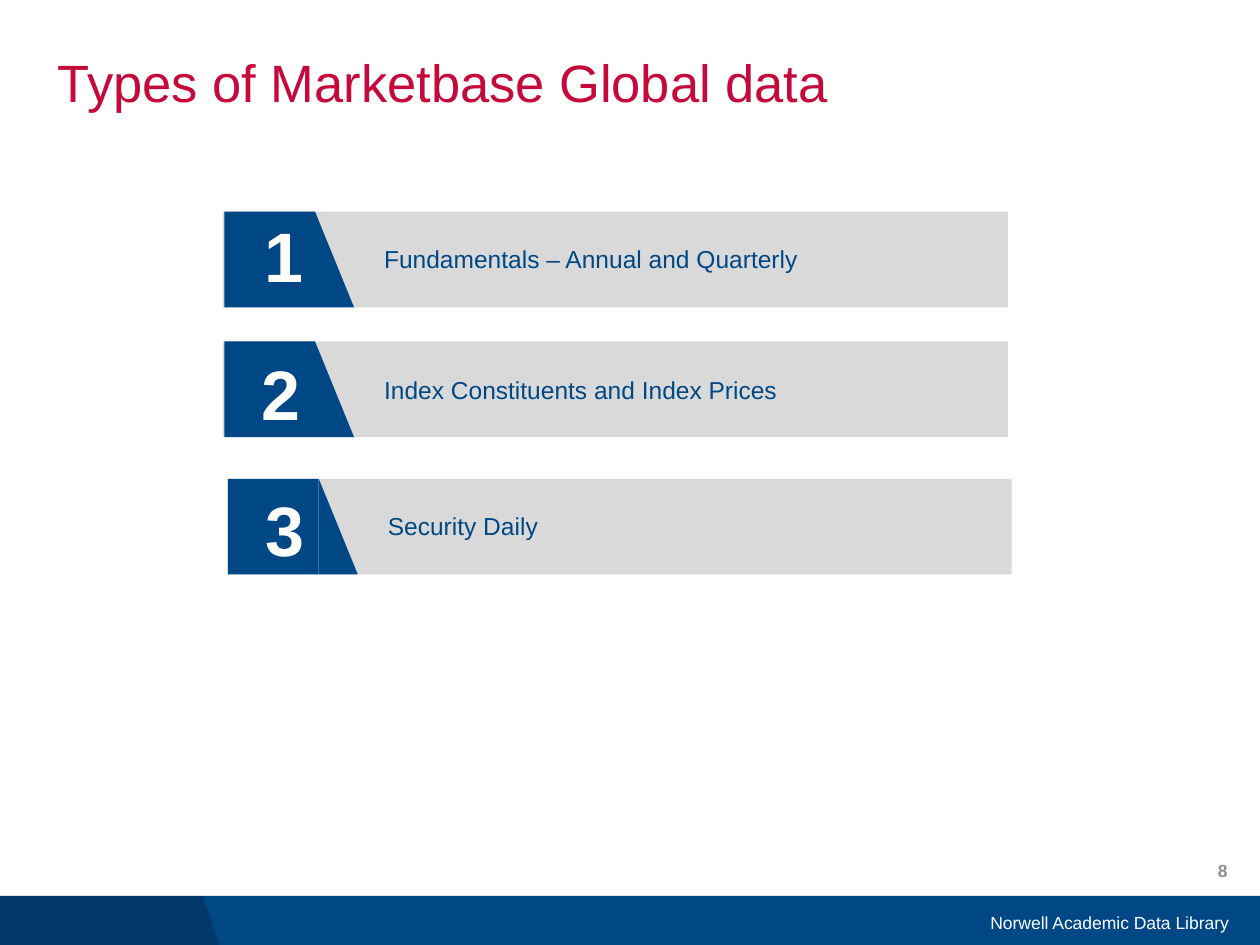
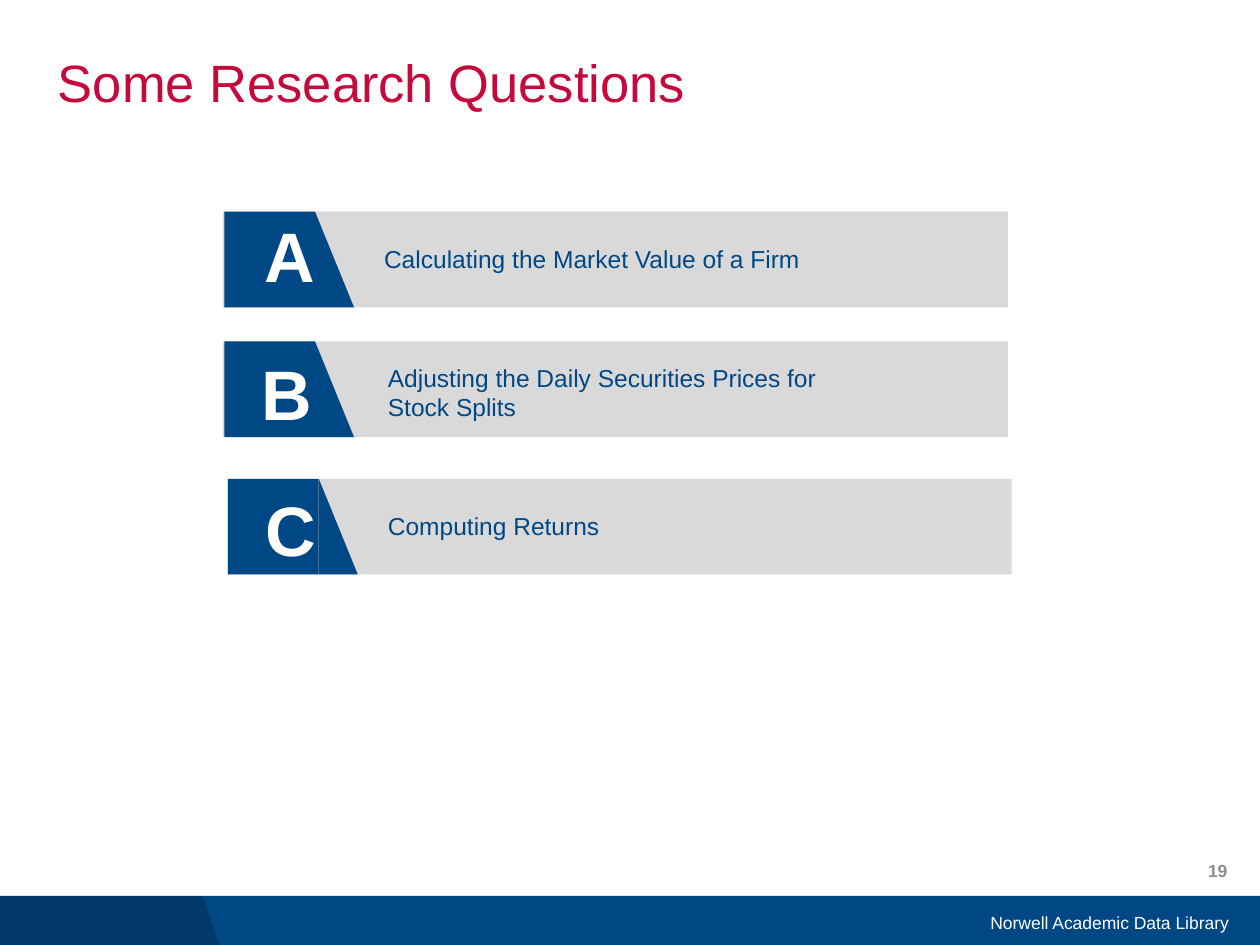
from dataclasses import dataclass

from lxml.etree import SubElement
from pptx import Presentation
from pptx.dml.color import RGBColor
from pptx.enum.shapes import MSO_SHAPE
from pptx.enum.text import MSO_ANCHOR, MSO_AUTO_SIZE, PP_ALIGN
from pptx.oxml.ns import qn
from pptx.util import Emu, Pt

# Shared look: 100 px to the inch
EMU_PER_PX = 9144
FONT = "Arial"
NAVY, CRIMSON, GREY = "004785", "C5093B", "D9D9D9"
WHITE, BLACK, NUMBER_GREY = "FFFFFF", "000000", "8F8F93"
FOOTER_TEXT = "Norwell Academic Data Library"
FOOTER_TOP, FOOTER_HEIGHT = 711, 42
ROW_WIDTH, ROW_HEIGHT = 623, 76
BADGE_INSET, BADGE_WIDTH, SLANT_WIDTH = 1, 72, 31


@dataclass
class RowPlace:
    left: int
    top: int
    mark_dx: int
    mark_dy: int
    mark_width: int


@dataclass
class Entry:
    mark: str
    label: str
    width: int = 389
    dx: int = 118
    dy: int = 21
    height: int = 34


@dataclass
class Page:
    title: str
    number: str
    entries: list[Entry]


ROWS = [
    RowPlace(177, 168, 23, -4, 59),
    RowPlace(177, 271, 21, 2, 53),
    RowPlace(180, 380, 21, 1, 52),
]

PAGES = [
    Page("Types of Marketbase Global data", "8", [
        Entry("1", "Fundamentals – Annual and Quarterly"),
        Entry("2", "Index Constituents and Index Prices", dy=22),
        Entry("3", "Security Daily", width=489),
    ]),
    Page("Some Research Questions", "19", [
        Entry("A", "Calculating the Market Value of a Firm", width=614),
        Entry("B", "Adjusting the Daily Securities Prices for Stock Splits",
              dx=121, dy=12, height=57),
        Entry("C", "Computing Returns", width=489),
    ]),
]


def px(length: int) -> Emu:
    return Emu(length * EMU_PER_PX)


def color(value: str) -> RGBColor:
    return RGBColor.from_string(value)


def paint(shape, fill: str) -> None:
    shape.shadow.inherit = False
    shape.fill.solid()
    shape.fill.fore_color.rgb = color(fill)
    shape.line.fill.background()


def add_block(shapes, kind, left: int, top: int, width: int, height: int, fill: str):
    block = shapes.add_shape(kind, px(left), px(top), px(width), px(height))
    paint(block, fill)
    return block


def write(frame, text: str, *, size: int, ink: str, bold: bool = False,
          align=PP_ALIGN.LEFT, anchor=MSO_ANCHOR.TOP) -> None:
    frame.word_wrap = True
    frame.auto_size = MSO_AUTO_SIZE.NONE
    frame.vertical_anchor = anchor
    paragraph = frame.paragraphs[0]
    paragraph.alignment = align
    run = paragraph.add_run()
    run.text = text
    run.font.name = FONT
    run.font.size = Pt(size)
    run.font.bold = bold
    run.font.color.rgb = color(ink)


def add_text(shapes, left: int, top: int, width: int, height: int, text: str, **style) -> None:
    box = shapes.add_textbox(px(left), px(top), px(width), px(height))
    write(box.text_frame, text, **style)


def add_title(slide, text: str) -> None:
    title = slide.shapes.title
    title.left, title.top, title.width, title.height = map(px, (46, 40, 862, 56))
    frame = title.text_frame
    frame.margin_left = frame.margin_right = 0
    frame.margin_top = frame.margin_bottom = px(5)
    write(frame, text, size=30, ink=CRIMSON)
    frame.paragraphs[0].line_spacing = 0.9


def add_footer(slide, number: str) -> None:
    shapes = slide.shapes
    add_block(shapes, MSO_SHAPE.RECTANGLE, 0, FOOTER_TOP, 1000, FOOTER_HEIGHT, NAVY)

    # Darkened slanted end of the band
    bottom = FOOTER_TOP + FOOTER_HEIGHT
    outline = shapes.build_freeform(0, FOOTER_TOP, scale=EMU_PER_PX)
    outline.add_line_segments([(161, FOOTER_TOP), (175, bottom), (0, bottom)])
    shade = outline.convert_to_shape()
    paint(shade, BLACK)
    ink = shade.fill._xPr.find(qn("a:solidFill"))[0]
    SubElement(ink, qn("a:alpha"), val="20000")

    small = dict(size=10, align=PP_ALIGN.RIGHT, anchor=MSO_ANCHOR.MIDDLE)
    add_text(shapes, 647, 712, 338, 40, FOOTER_TEXT, ink=WHITE, **small)
    add_text(shapes, 759, 671, 225, 40, number, ink=NUMBER_GREY, bold=True, **small)


def add_row(slide, place: RowPlace, entry: Entry) -> None:
    row = slide.shapes.add_group_shape().shapes
    left, top = place.left, place.top
    badge_left = left + BADGE_INSET
    add_block(row, MSO_SHAPE.RECTANGLE, left, top, ROW_WIDTH, ROW_HEIGHT, GREY)
    add_block(row, MSO_SHAPE.RECTANGLE, badge_left, top, BADGE_WIDTH, ROW_HEIGHT, NAVY)
    slant = add_block(row, MSO_SHAPE.ISOSCELES_TRIANGLE, badge_left + BADGE_WIDTH, top,
                      SLANT_WIDTH, ROW_HEIGHT, NAVY)
    slant.adjustments[0] = 0
    add_text(row, left + place.mark_dx, top + place.mark_dy, place.mark_width, 77,
             entry.mark, size=40, ink=WHITE, bold=True)
    add_text(row, left + entry.dx, top + entry.dy, entry.width, entry.height,
             entry.label, size=14, ink=NAVY)


def main() -> None:
    deck = Presentation()
    deck.slide_width, deck.slide_height = px(1000), px(750)
    title_only = deck.slide_layouts[5]
    for page in PAGES:
        slide = deck.slides.add_slide(title_only)
        add_footer(slide, page.number)
        add_title(slide, page.title)
        for place, entry in zip(ROWS, page.entries):
            add_row(slide, place, entry)
    deck.save("out.pptx")


if __name__ == "__main__":
    main()
